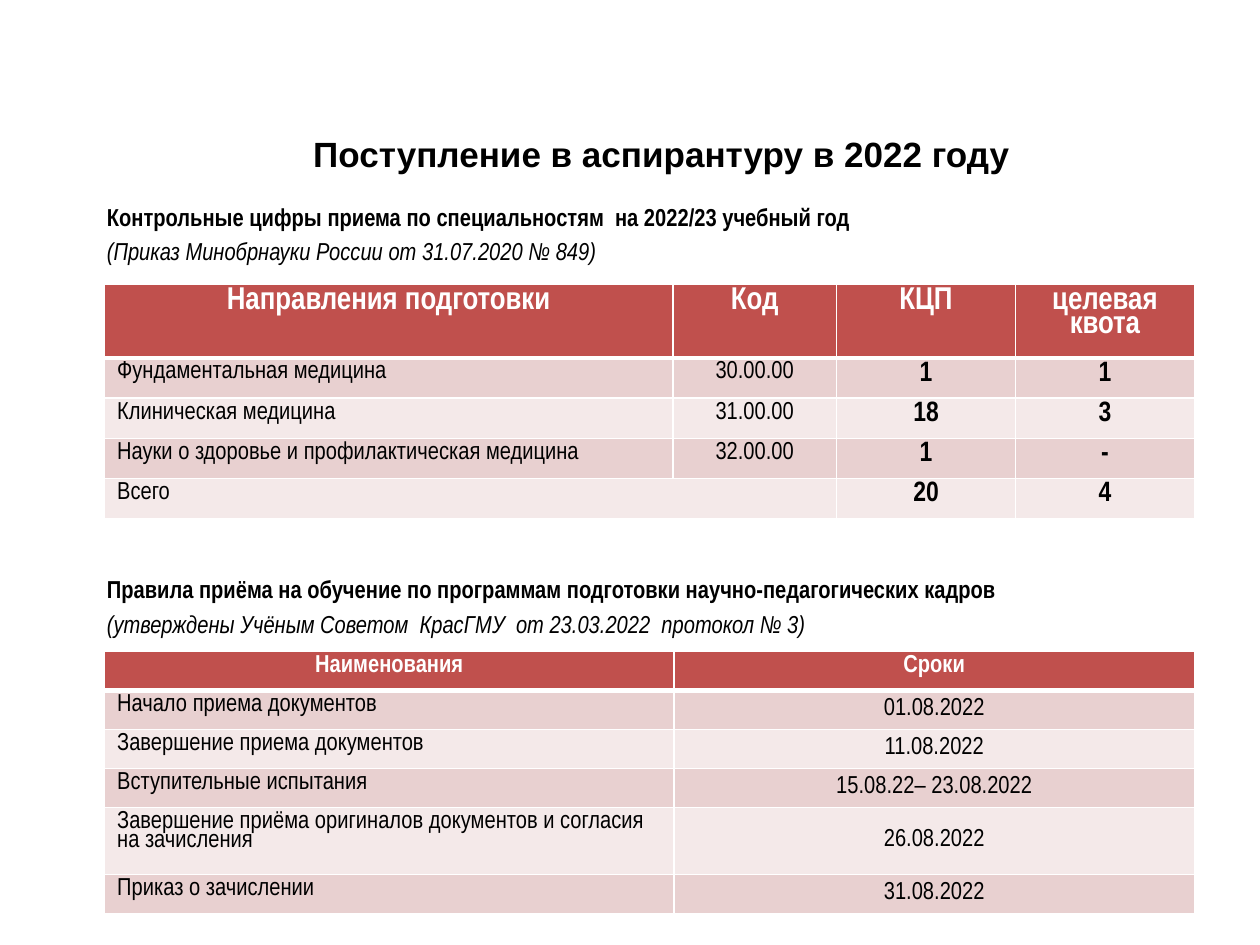
from pptx import Presentation
from pptx.dml.color import RGBColor
from pptx.enum.text import MSO_ANCHOR as Anchor, PP_ALIGN as Align
from pptx.oxml import parse_xml
from pptx.oxml.ns import nsdecls
from pptx.util import Inches, Pt

BLACK = RGBColor(0x00, 0x00, 0x00)
WHITE = RGBColor(0xFF, 0xFF, 0xFF)
RED = RGBColor(0xC0, 0x50, 0x4D)
BANDS = (RGBColor(0xE8, 0xD0, 0xD0), RGBColor(0xF4, 0xE9, 0xE9))

HEADER = {"size": Pt(14), "bold": True, "align": Align.CENTER, "color": WHITE}
LABEL = {"size": Pt(14), "bold": False, "align": Align.LEFT}
CODE = LABEL | {"align": Align.CENTER}
COUNT = CODE | {"size": Pt(16), "bold": True}
DATE = CODE | {"anchor": Anchor.MIDDLE}

QUOTAS = [
    ("Направления подготовки", "Код", "КЦП", "целевая квота"),
    ("Фундаментальная медицина", "30.00.00", "1", "1"),
    ("Клиническая медицина", "31.00.00", "18", "3"),
    ("Науки о здоровье и профилактическая медицина", "32.00.00", "1", "-"),
    ("Всего", "", "20", "4"),
]
DATES = [
    ("Наименования", "Сроки"),
    ("Начало приема документов", "01.08.2022"),
    ("Завершение приема документов", "11.08.2022"),
    ("Вступительные испытания", "15.08.22– 23.08.2022"),
    ("Завершение приёма оригиналов документов и согласия на зачисления", "26.08.2022"),
    ("Приказ о зачислении", "31.08.2022"),
]


class AdmissionSlide:
    """Holds the slide and its style, and adds text and banded tables."""

    def __init__(self, slide, font="Arial Narrow"):
        self.slide = slide
        self.font = font

    def add_words(self, paragraph, text, align=Align.LEFT, color=BLACK, **style):
        run = paragraph.add_run()
        run.text = text
        paragraph.alignment = align
        run.font.color.rgb = color
        for name, value in ({"name": self.font} | style).items():
            setattr(run.font, name, value)

    def text(self, left, top, width, height, lines, anchor=Anchor.TOP):
        frame = self.slide.shapes.add_textbox(
            Inches(left), Inches(top), Inches(width), Inches(height)
        ).text_frame
        frame.word_wrap = True
        frame.vertical_anchor = anchor
        for index, (line, style) in enumerate(lines):
            paragraph = frame.add_paragraph() if index else frame.paragraphs[0]
            if index:
                paragraph.space_before = Pt(2.8)
            self.add_words(paragraph, line, **style)

    def section(self, top, heading, source):
        lines = [
            (heading, {"size": Pt(14), "bold": True}),
            (source, {"size": Pt(14), "italic": True}),
        ]
        self.text(0.75, top, 9, 0.65, lines)

    def border(self, cell, side, points):
        cell._tc.get_or_add_tcPr().append(parse_xml(
            f'<a:{side} {nsdecls("a")} w="{Pt(points)}"><a:solidFill>'
            f'<a:srgbClr val="{WHITE}"/></a:solidFill></a:{side}>'
        ))

    def cell(self, cell, text, fill, borders, anchor=Anchor.TOP, **style):
        cell.vertical_anchor = anchor
        for side, points in borders.items():
            self.border(cell, side, points)
        cell.fill.solid()
        cell.fill.fore_color.rgb = fill
        paragraph = cell.text_frame.paragraphs[0]
        paragraph.line_spacing = 0.8
        if text:
            self.add_words(paragraph, text, **style)

    def table(self, top, widths, heights, rows, header, styles):
        table = self.slide.shapes.add_table(
            len(rows), len(widths), Inches(0.83), Inches(top),
            Inches(sum(widths)), Inches(sum(heights)),
        ).table
        for column, width in zip(table.columns, widths):
            column.width = Inches(width)
        for index, (row, height, texts) in enumerate(zip(table.rows, heights, rows)):
            row.height = Inches(height)
            fill = BANDS[(index - 1) % 2] if index else RED
            borders = {
                "lnL": 1, "lnR": 1,
                "lnT": 3 if index == 1 else 1,
                "lnB": 1 if index else 3,
            }
            for cell, text, style in zip(row.cells, texts, styles):
                self.cell(cell, text, fill, borders, **(style if index else header))
        return table


def main():
    deck = Presentation()
    deck.slide_width, deck.slide_height = Inches(10), Inches(7.5)
    page = AdmissionSlide(deck.slides.add_slide(deck.slide_layouts[6]))

    title = {"name": "Arial", "size": Pt(20), "bold": True, "align": Align.CENTER}
    page.text(0.75, 0.99, 9, 0.46,
              [("Поступление в аспирантуру в 2022 году", title)], Anchor.MIDDLE)

    page.section(1.55, "Контрольные цифры приема по специальностям  на 2022/23 учебный год",
                 "(Приказ Минобрнауки России от 31.07.2020 № 849)")
    quotas = page.table(2.26, [4.51, 1.3, 1.42, 1.42], [0.56] + [0.32] * 4, QUOTAS,
                        HEADER | {"size": Pt(18)}, [LABEL, CODE, COUNT, COUNT])
    quotas.cell(4, 0).merge(quotas.cell(4, 1))

    page.section(4.51, "Правила приёма на обучение по программам подготовки научно-педагогических кадров",
                 "(утверждены Учёным Советом  КрасГМУ  от 23.03.2022  протокол № 3)")
    page.table(5.17, [4.52, 4.13], [0.31] * 4 + [0.53, 0.31], DATES,
               HEADER, [LABEL, DATE])

    deck.save("out.pptx")


if __name__ == "__main__":
    main()
